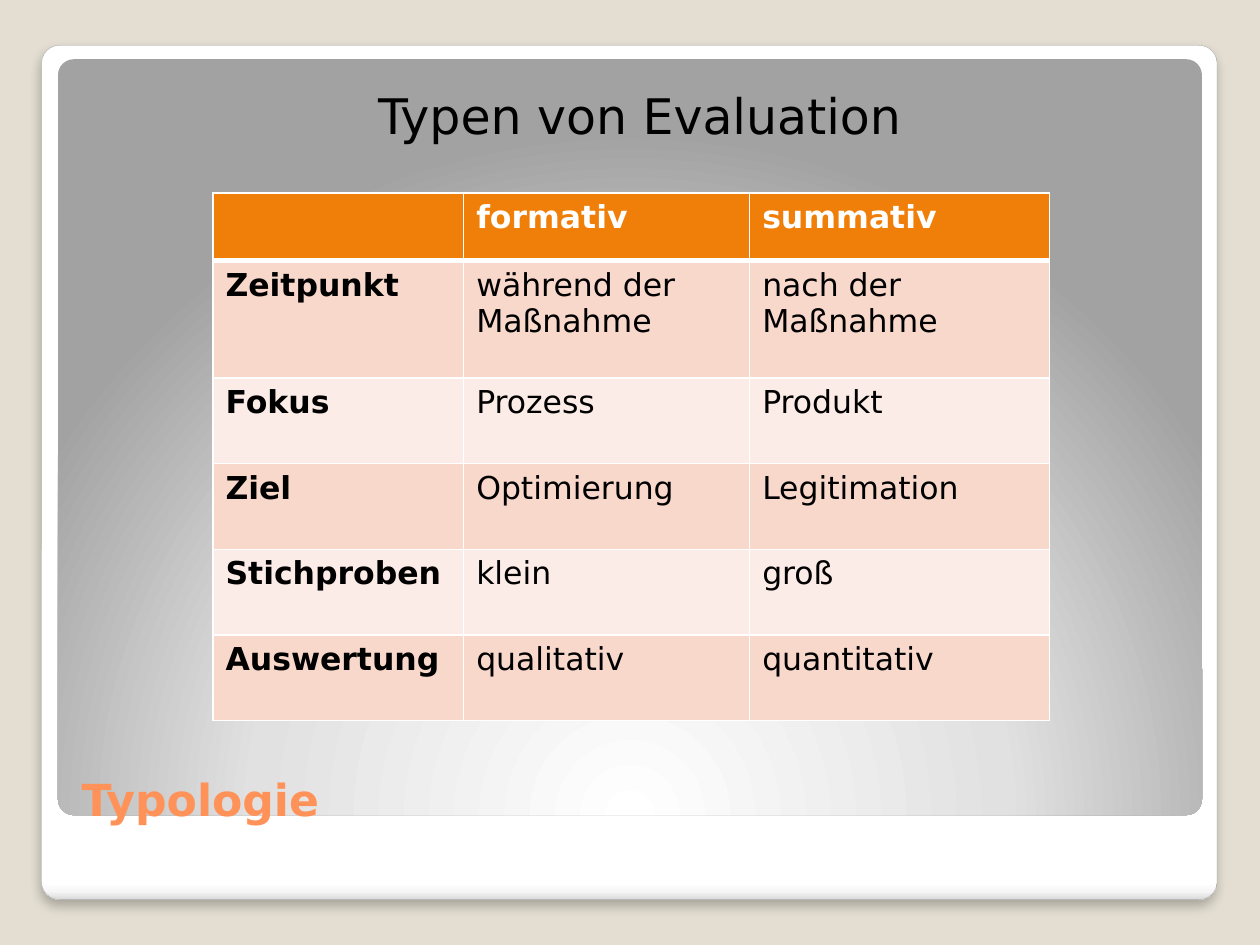
from dataclasses import dataclass

from lxml.etree import SubElement
from pptx import Presentation
from pptx.dml.color import RGBColor
from pptx.enum.shapes import MSO_SHAPE
from pptx.enum.text import MSO_ANCHOR, PP_ALIGN
from pptx.oxml import parse_xml
from pptx.oxml.ns import nsdecls, qn
from pptx.util import Inches, Pt

SLIDE_W, SLIDE_H = Inches(10), Inches(7.5)
FONT = "DejaVu Sans"

BLACK = RGBColor(0x00, 0x00, 0x00)
WHITE = RGBColor(0xFF, 0xFF, 0xFF)
SAND = RGBColor(0xE3, 0xDE, 0xD1)
EDGE = RGBColor(0xA4, 0xA4, 0xA4)
CORAL = RGBColor(0xFF, 0x92, 0x58)
ORANGE = RGBColor(0xF0, 0x7F, 0x09)
BANDS = (RGBColor(0xF9, 0xD8, 0xCC), RGBColor(0xFC, 0xEC, 0xE7))
FRAME_STOPS = ((0, WHITE), (98, WHITE), (99, RGBColor(0xF7, 0xF7, 0xF7)),
               (100, RGBColor(0xDA, 0xDA, 0xDA)))
PANEL_STOPS = ((0, WHITE), (55, RGBColor(0xE1, 0xE1, 0xE1)),
               (100, RGBColor(0xA2, 0xA2, 0xA2)))
DOWNWARD = '<a:lin ang="5400000" scaled="0"/>'
FROM_BELOW = ('<a:path path="circle"><a:fillToRect l="50000" t="175000" '
              'r="50000" b="-75000"/></a:path>')

COLUMNS = (1.99, 2.27, 2.38)
ROWS = (0.54, 0.93) + (0.68,) * 4
CELLS = (
    ("", "formativ", "summativ"),
    ("Zeitpunkt", "während der Maßnahme", "nach der Maßnahme"),
    ("Fokus", "Prozess", "Produkt"),
    ("Ziel", "Optimierung", "Legitimation"),
    ("Stichproben", "klein", "groß"),
    ("Auswertung", "qualitativ", "quantitativ"),
)


@dataclass(frozen=True)
class Box:
    """Position and size in percent of the slide."""
    x: float
    y: float
    w: float
    h: float

    def emu(self) -> tuple[int, ...]:
        return tuple(int(side * share / 100) for side, share in
                     zip((SLIDE_W, SLIDE_H) * 2, (self.x, self.y, self.w, self.h)))


@dataclass(frozen=True)
class Card:
    box: Box
    stops: tuple
    direction: str


@dataclass(frozen=True)
class Label:
    text: str
    box: Box
    font: dict
    frame: dict
    paragraph: dict


FRAME = Card(Box(3.3, 4.8, 93.3, 90.4), FRAME_STOPS, DOWNWARD)
PANEL = Card(Box(4.6, 6.27, 90.8, 80), PANEL_STOPS, FROM_BELOW)
TABLE_BOX = Box(16.9, 20.4, 66.4, 56)
LABELS = (
    Label("Typologie", Box(5.5, 81.47, 89.5, 6.53),
          {"size": Pt(25.2), "bold": True, "color": CORAL},
          {"vertical_anchor": MSO_ANCHOR.BOTTOM}, {}),
    Label("Typen von Evaluation", Box(5.5, 7.73, 89.5, 61.07),
          {"size": Pt(28), "color": BLACK},
          {"margin_left": Inches(0.2), "margin_top": Inches(0.1)},
          {"alignment": PP_ALIGN.CENTER, "space_before": Pt(2.5)}),
)


def apply(target, values: dict) -> None:
    for name, value in values.items():
        setattr(target, name, value)


def write(p, text: str, color: RGBColor, **font) -> None:
    r = p.add_run()
    r.text = text
    apply(r.font, {"name": FONT, **font})
    r.font.color.rgb = color


def add_card(slide, card: Card):
    sp = slide.shapes.add_shape(MSO_SHAPE.ROUNDED_RECTANGLE, *card.box.emu())
    sp.adjustments[0] = 0.021
    sp.shadow.inherit = False
    sp.line.fill.background()
    stops = "".join(f'<a:gs pos="{pos * 1000}"><a:srgbClr val="{color}"/></a:gs>'
                    for pos, color in card.stops)
    geometry = sp._element.spPr.find(qn("a:prstGeom"))
    geometry.addnext(parse_xml(
        f'<a:gradFill {nsdecls("a")} rotWithShape="1"><a:gsLst>{stops}</a:gsLst>'
        f'{card.direction}</a:gradFill>'))
    return sp


def add_shadow(sp) -> None:
    effects = sp._element.spPr.find(qn("a:effectLst"))
    effects.append(parse_xml(
        f'<a:outerShdw {nsdecls("a")} blurRad="{Pt(6)}" dist="{Pt(4)}" '
        'dir="5400000" algn="tl" rotWithShape="0"><a:srgbClr val="000000">'
        '<a:alpha val="25000"/></a:srgbClr></a:outerShdw>'))


def add_label(slide, label: Label) -> None:
    tf = slide.shapes.add_textbox(*label.box.emu()).text_frame
    apply(tf, {"word_wrap": True, **label.frame})
    p = tf.paragraphs[0]
    apply(p, label.paragraph)
    write(p, label.text, **label.font)


def add_borders(cell, widths: dict) -> None:
    """Put white lines ahead of the fill, as the schema orders them."""
    tc_pr = cell._tc.get_or_add_tcPr()
    for i, (side, width) in enumerate(widths.items()):
        ln = SubElement(tc_pr, qn(f"a:ln{side}"), w=str(Pt(width)))
        fill = SubElement(ln, qn("a:solidFill"))
        SubElement(fill, qn("a:srgbClr"), val=str(WHITE))
        tc_pr.insert(i, ln)


def add_typology_table(slide) -> None:
    table = slide.shapes.add_table(len(ROWS), len(COLUMNS), *TABLE_BOX.emu()).table
    for column, width in zip(table.columns, COLUMNS):
        column.width = Inches(width)
    for row, height in zip(table.rows, ROWS):
        row.height = Inches(height)
    for i, texts in enumerate(CELLS):
        header = i == 0
        for j, text in enumerate(texts):
            cell = table.cell(i, j)
            cell.fill.solid()
            cell.fill.fore_color.rgb = ORANGE if header else BANDS[(i - 1) % 2]
            add_borders(cell, {"L": 1, "R": 1, "T": 3 if i == 1 else 1,
                               "B": 3 if header else 1})
            if text:
                write(cell.text_frame.paragraphs[0], text,
                      WHITE if header else BLACK,
                      size=Pt(18), bold=header or j == 0)


def main() -> None:
    prs = Presentation()
    prs.slide_width, prs.slide_height = SLIDE_W, SLIDE_H
    slide = prs.slides.add_slide(prs.slide_layouts[6])
    slide.background.fill.solid()
    slide.background.fill.fore_color.rgb = SAND

    frame = add_card(slide, FRAME)
    frame.line.color.rgb = EDGE
    frame.line.width = Pt(0.16)
    add_shadow(frame)
    add_card(slide, PANEL)
    for label in LABELS:
        add_label(slide, label)
    add_typology_table(slide)
    prs.save("out.pptx")


if __name__ == "__main__":
    main()
